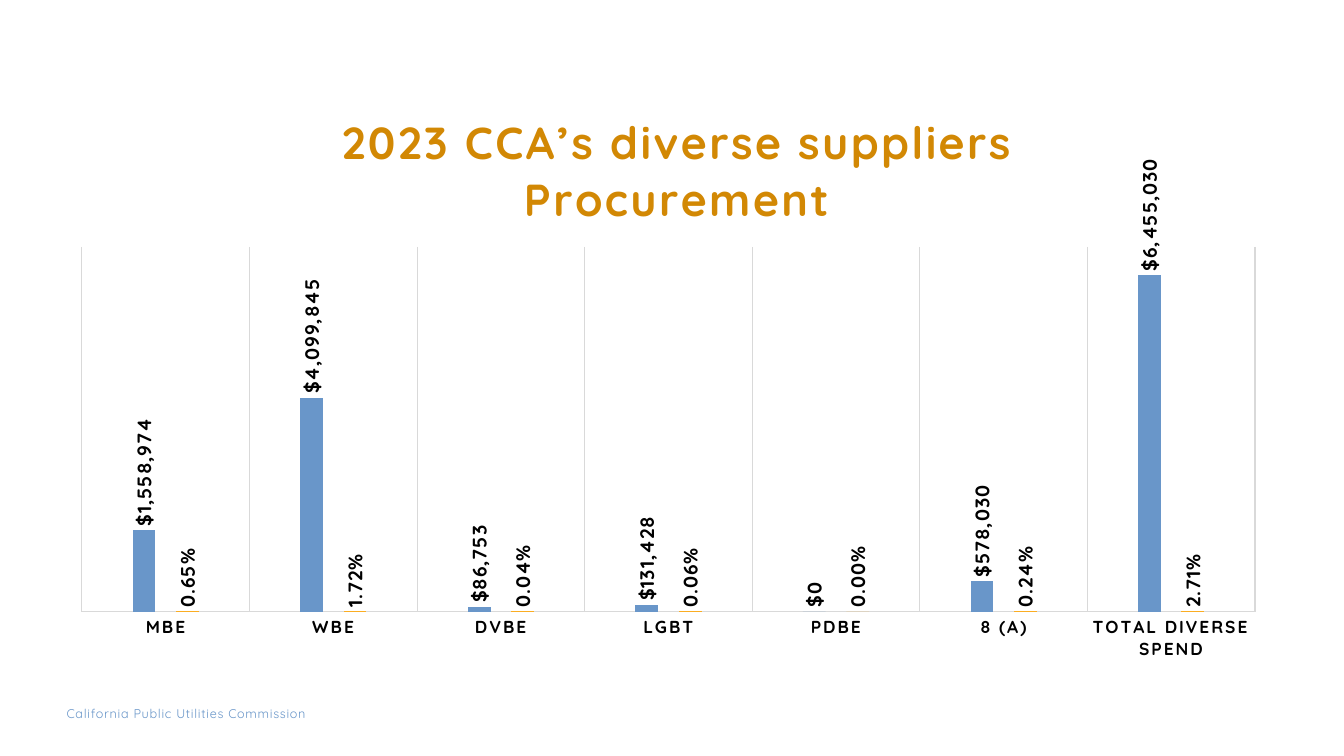
from dataclasses import dataclass

from lxml import etree
from pptx import Presentation
from pptx import util as u
from pptx.chart.data import CategoryChartData
from pptx.dml.color import RGBColor
from pptx.enum import chart as ch
from pptx.oxml.ns import qn

SLIDE_WIDTH, SLIDE_HEIGHT = u.Inches(13.33), u.Inches(7.5)


@dataclass(frozen=True)
class Theme:
    font: str = "Quicksand"
    blue: str = "6996C9"
    amber: str = "FBAD22"
    gold: str = "D28804"
    grid: str = "D9D9D9"
    black: str = "000000"
    title_size: float = 32
    label_size: float = 14
    category_size: float = 12.4
    base_size: float = 10
    footer_size: float = 9


@dataclass(frozen=True)
class Area:
    """A rectangle given as shares of whatever contains it."""
    left: float
    top: float
    width: float = 0
    height: float = 0

    def on_slide(self) -> tuple:
        return (int(self.left * SLIDE_WIDTH), int(self.top * SLIDE_HEIGHT),
                int(self.width * SLIDE_WIDTH), int(self.height * SLIDE_HEIGHT))


@dataclass(frozen=True)
class Measure:
    name: str
    values: tuple
    number_format: str
    color: str


THEME = Theme()
CHART_AREA = Area(0.57 / 13.33, 0.79 / 7.5, 12.12 / 13.33, 5.93 / 7.5)
FOOTER_AREA = Area(0.66 / 13.33, 7 / 7.5, 3.21 / 13.33, 0.15 / 7.5)
PLOT_AREA = Area(0.02, 0.28, 0.96, 0.61)
TITLE_AREA = Area(0.23, 0.05)

TITLE_LINES = ("2023 CCA’s diverse suppliers", "Procurement")
CATEGORIES = ("MBE", "WBE", "DVBE", "LGBT", "PDBE", "8 (A)", "TOTAL DIVERSE SPEND")
MEASURES = (
    Measure("Series 1", (1558974, 4099845, 86753, 131428, 0, 578030, 6455030),
            '"$"#,##0', THEME.blue),
    Measure("Series 2", (0.0065, 0.0172, 0.0004, 0.0006, 0, 0.0024, 0.0271),
            "0.00%", THEME.amber),
)


def style_font(font, size: float, color: str, bold: bool = False) -> None:
    font.name = THEME.font
    font.size = u.Pt(size)
    font.bold = bold
    font.color.rgb = RGBColor.from_string(color)


def style_line(line) -> None:
    line.color.rgb = RGBColor.from_string(THEME.grid)
    line.width = u.Pt(0.75)


def space_letters(properties, points: float) -> None:
    properties.set("spc", str(round(points * 100)))


def space_chart_text(element, points: float) -> None:
    for properties in element.iter(qn("a:defRPr")):
        space_letters(properties, points)


def set_layout(parent, area: Area, inner: bool = False) -> None:
    """Fix the place of a chart part inside the chart."""
    layout = parent.find(qn("c:layout"))
    if layout is None:
        layout = etree.Element(qn("c:layout"))
        text = parent.find(qn("c:tx"))
        parent.insert(0 if text is None else 1, layout)
    manual = etree.SubElement(layout, qn("c:manualLayout"))
    settings = [("layoutTarget", "inner")] if inner else []
    settings += [("xMode", "edge"), ("yMode", "edge"), ("x", area.left), ("y", area.top)]
    if area.width:
        settings += [("w", area.width), ("h", area.height)]
    for tag, value in settings:
        etree.SubElement(manual, qn(f"c:{tag}")).set("val", str(value))


def add_title(chart) -> None:
    chart.has_title = True
    frame = chart.chart_title.text_frame
    frame.text = "\n".join(TITLE_LINES)
    for para in frame.paragraphs:
        for span in para.runs:
            style_font(span.font, THEME.title_size, THEME.gold, bold=True)
            space_letters(span.font._element if hasattr(span.font, "_element")
                          else span._r.get_or_add_rPr(), 1.6)
    chart.chart_title.include_in_layout = False
    set_layout(chart.chart_title._element, TITLE_AREA)


def style_axes(chart) -> None:
    categories, values = chart.category_axis, chart.value_axis
    categories.major_tick_mark = ch.XL_TICK_MARK.NONE
    categories.has_major_gridlines = True
    style_line(categories.major_gridlines.format.line)
    style_line(categories.format.line)
    style_font(categories.tick_labels.font, THEME.category_size, THEME.black, bold=True)
    space_chart_text(categories._element, 1.2)
    values.visible = False
    values.has_major_gridlines = False
    values.minimum_scale, values.maximum_scale = 0, 7_000_000


def style_series(series, measure: Measure) -> None:
    series.format.fill.solid()
    series.format.fill.fore_color.rgb = RGBColor.from_string(measure.color)
    labels = series.data_labels
    labels.show_value = True
    labels.position = ch.XL_LABEL_POSITION.OUTSIDE_END
    labels.number_format = measure.number_format
    labels.number_format_is_linked = False
    style_font(labels.font, THEME.label_size, THEME.black, bold=True)
    space_chart_text(labels._element, 0.5)
    turned = labels._element.find(qn("c:txPr")).find(qn("a:bodyPr"))
    turned.set("rot", "-5400000")
    turned.set("vert", "horz")


def add_procurement_chart(page) -> None:
    data = CategoryChartData()
    data.categories = CATEGORIES
    for measure in MEASURES:
        data.add_series(measure.name, measure.values, measure.number_format)
    chart = page.shapes.add_chart(
        ch.XL_CHART_TYPE.COLUMN_CLUSTERED, *CHART_AREA.on_slide(), data).chart
    style_font(chart.font, THEME.base_size, THEME.black)
    chart.has_legend = False
    plot = chart.plots[0]
    plot.gap_width, plot.overlap, plot.vary_by_categories = 444, -90, False
    add_title(chart)
    style_axes(chart)
    for series, measure in zip(plot.series, MEASURES):
        style_series(series, measure)
    set_layout(chart._chartSpace.chart.plotArea, PLOT_AREA, inner=True)


def add_footer(page) -> None:
    frame = page.shapes.add_textbox(*FOOTER_AREA.on_slide()).text_frame
    frame.word_wrap = True
    frame.margin_left = frame.margin_right = frame.margin_top = frame.margin_bottom = 0
    frame.text = "California Public Utilities Commission"
    span = frame.paragraphs[0].runs[0]
    style_font(span.font, THEME.footer_size, THEME.blue)
    space_letters(span._r.get_or_add_rPr(), 0.5)


def main() -> None:
    deck = Presentation()
    deck.slide_width, deck.slide_height = SLIDE_WIDTH, SLIDE_HEIGHT
    page = deck.slides.add_slide(deck.slide_layouts[6])
    add_footer(page)
    add_procurement_chart(page)
    deck.save("out.pptx")


if __name__ == "__main__":
    main()
